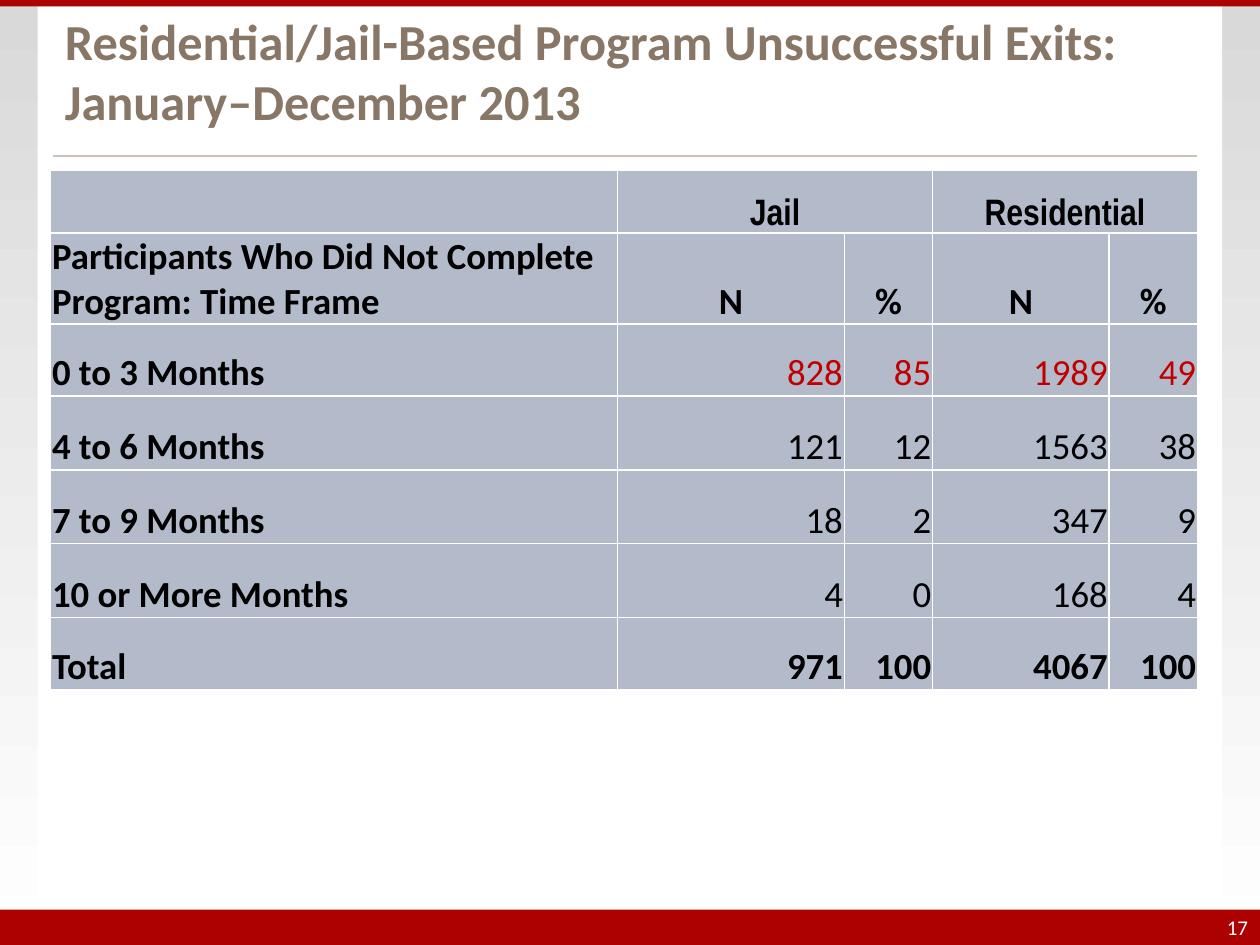
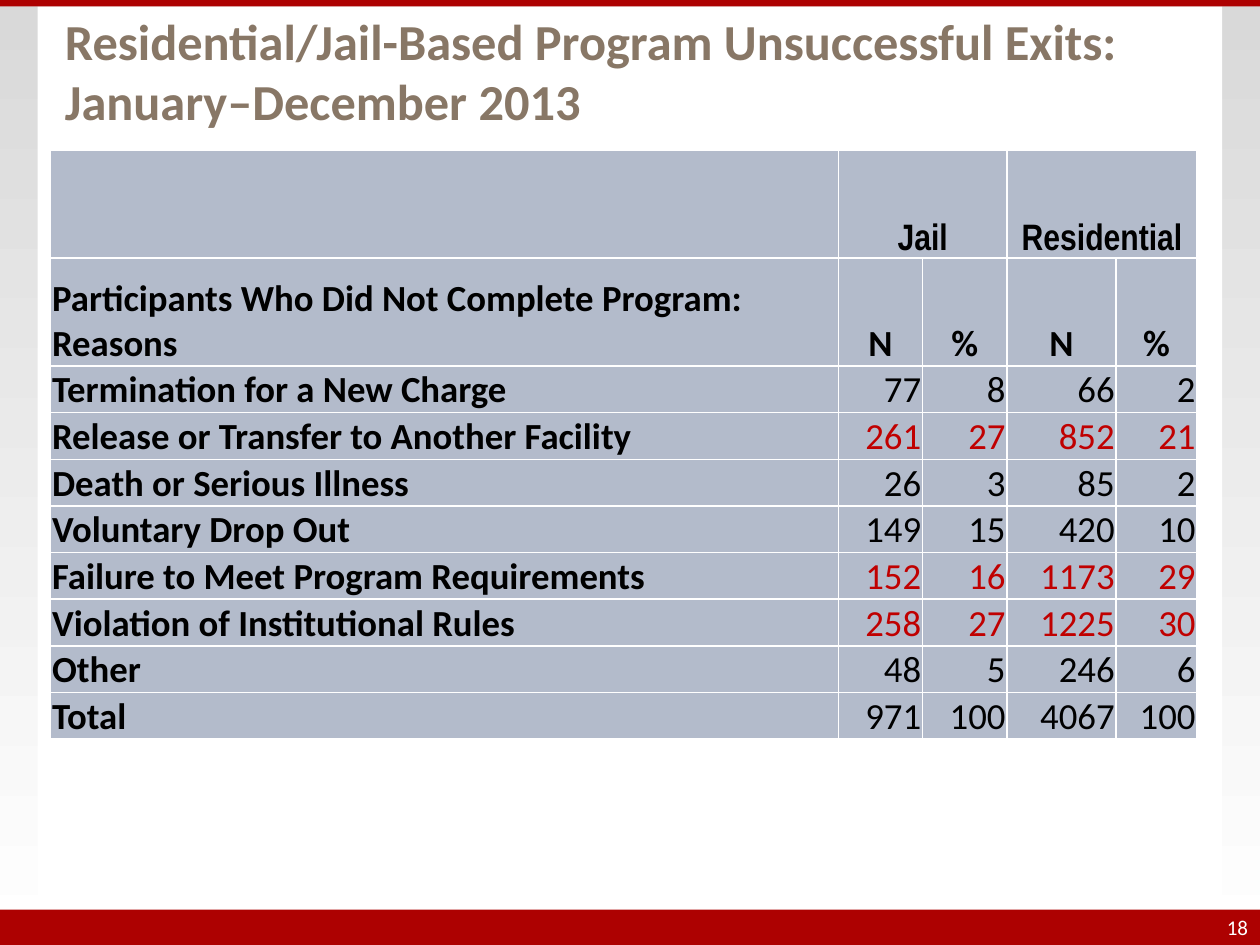
from collections import namedtuple
from dataclasses import dataclass

from lxml import etree
from pptx import Presentation
from pptx.dml.color import RGBColor
from pptx.enum import shapes, text
from pptx.oxml import ns
from pptx.util import Cm, Pt

Box = namedtuple("Box", "left top width height")
Style = namedtuple("Style", "font size color bold")


@dataclass(frozen=True)
class Theme:
    backdrop: tuple = ("D9D9D9", "FFFFFF")
    panel: str = "FFFFFF"
    band: str = "AD0101"
    rule: str = "CBC2B9"
    cell: str = "B3BBCB"
    border: str = "FFFFFF"
    rule_width: float = 1.25
    border_width: float = 1
    title: Style = Style("Calibri", 28.8, "887766", True)
    number: Style = Style("Calibri", 12, "FFFFFF", False)
    group: Style = Style("Arial Narrow", 21, "000000", True)
    label: Style = Style("Calibri", 21, "000000", True)
    value: Style = Style("Calibri", 21, "000000", False)
    highlight: Style = Style("Calibri", 21, "C00000", False)


THEME = Theme()
PAGE = Box(0, 0, 25.4, 19.05)
TITLE = "Residential/Jail-Based Program Unsuccessful Exits: January–December 2013"
GROUPS = ("Jail", "Residential")
LEFT, CENTER, RIGHT = text.PP_ALIGN.LEFT, text.PP_ALIGN.CENTER, text.PP_ALIGN.RIGHT

EXITS_BY_TIME = [
    ("0 to 3 Months", 828, 85, 1989, 49),
    ("4 to 6 Months", 121, 12, 1563, 38),
    ("7 to 9 Months", 18, 2, 347, 9),
    ("10 or More Months", 4, 0, 168, 4),
    ("Total", 971, 100, 4067, 100),
]
EXITS_BY_REASON = [
    ("Termination for a New Charge", 77, 8, 66, 2),
    ("Release or Transfer to Another Facility", 261, 27, 852, 21),
    ("Death or Serious Illness", 26, 3, 85, 2),
    ("Voluntary Drop Out", 149, 15, 420, 10),
    ("Failure to Meet Program Requirements", 152, 16, 1173, 29),
    ("Violation of Institutional Rules", 258, 27, 1225, 30),
    ("Other", 48, 5, 246, 6),
    ("Total", 971, 100, 4067, 100),
]


def rgb(color):
    return RGBColor.from_string(color)


def write(frame, words, style, align):
    frame.text = words
    para = frame.paragraphs[0]
    para.alignment = align
    font = para.runs[0].font
    font.name, font.size, font.bold = style.font, Pt(style.size), style.bold
    font.color.rgb = rgb(style.color)


def add_block(page, box, color):
    block = page.shapes.add_shape(shapes.MSO_SHAPE.RECTANGLE, *map(Cm, box))
    block.shadow.inherit = False
    block.fill.solid()
    block.fill.fore_color.rgb = rgb(color)
    block.line.fill.background()


def add_words(page, box, words, style, align, anchor):
    frame = page.shapes.add_textbox(*map(Cm, box)).text_frame
    frame.word_wrap = True
    frame.vertical_anchor = anchor
    frame.margin_left = frame.margin_right = Cm(0.24)
    frame.margin_top = frame.margin_bottom = Cm(0.11)
    write(frame, words, style, align)


def add_rule(page, left, right, top):
    rule = page.shapes.add_connector(
        shapes.MSO_CONNECTOR.STRAIGHT, Cm(left), Cm(top), Cm(right), Cm(top))
    rule.line.color.rgb = rgb(THEME.rule)
    rule.line.width = Pt(THEME.rule_width)
    etree.SubElement(rule.element.spPr, ns.qn("a:effectLst"))


def paint_backdrop(page):
    fill = page.background.fill
    fill.gradient()
    fill.gradient_angle = 270
    for position, (stop, color) in enumerate(zip(fill.gradient_stops, THEME.backdrop)):
        stop.color.rgb = rgb(color)
        stop.position = position


def add_frame(page, box, number):
    paint_backdrop(page)
    bottom = box.top + box.height
    footer = Box(box.left, bottom - 0.71, box.width, 0.71)
    add_block(page, Box(box.left + 0.76, box.top + 0.13, box.width - 1.52, box.height - 0.13),
              THEME.panel)
    add_block(page, footer, THEME.band)
    add_block(page, Box(box.left, box.top, box.width, 0.13), THEME.band)
    add_rule(page, box.left + 1.07, box.left + 24.13, box.top + 3.15)
    add_words(page, Box(box.left + 1.07, box.top + 0.64, 23.06, 2.11), TITLE,
              THEME.title, LEFT, text.MSO_ANCHOR.BOTTOM)
    add_words(page, Box(box.left + box.width - 1.57, footer.top, 1.57, footer.height),
              str(number), THEME.number, RIGHT, text.MSO_ANCHOR.MIDDLE)


def style_cell(cell):
    props = cell._tc.get_or_add_tcPr()
    for side in ("lnL", "lnR", "lnT", "lnB"):
        line = etree.SubElement(props, ns.qn(f"a:{side}"), w=str(Pt(THEME.border_width)))
        fill = etree.SubElement(line, ns.qn("a:solidFill"))
        etree.SubElement(fill, ns.qn("a:srgbClr"), val=THEME.border)
    cell.fill.solid()
    cell.fill.fore_color.rgb = rgb(THEME.cell)
    cell.vertical_anchor = text.MSO_ANCHOR.BOTTOM
    cell.margin_left = cell.margin_right = cell.margin_top = Cm(0.03)
    cell.margin_bottom = 0


def add_exit_table(page, left, top, widths, heights, heading, records,
                   highlighted, total_style):
    box = Box(left, top, sum(widths), sum(heights))
    table = page.shapes.add_table(len(heights), len(widths), *map(Cm, box)).table
    table.first_row = table.horz_banding = False
    for column, width in zip(table.columns, widths):
        column.width = Cm(width)
    for row, height in zip(table.rows, heights):
        row.height = Cm(height)
    for cell in table.iter_cells():
        style_cell(cell)

    for index, group in enumerate(GROUPS):
        first = 1 + 2 * index
        table.cell(0, first).merge(table.cell(0, first + 1))
        write(table.cell(0, first).text_frame, group, THEME.group, CENTER)

    for column, words in enumerate((heading, *("N", "%") * len(GROUPS))):
        write(table.cell(1, column).text_frame, words, THEME.label,
              CENTER if column else LEFT)

    for row, (label, *values) in enumerate(records, 2):
        style = THEME.highlight if label in highlighted else THEME.value
        if label == "Total":
            style = total_style
        write(table.cell(row, 0).text_frame, label, THEME.label, LEFT)
        for column, value in enumerate(values, 1):
            write(table.cell(row, column).text_frame, str(value), style, RIGHT)


def add_time_slide(page, box):
    add_frame(page, box, 17)
    add_exit_table(
        page, box.left + 1.02, box.top + 3.43,
        (11.43, 4.57, 1.78, 3.56, 1.78),
        (1.27, 1.83, 1.45, 1.49, 1.49, 1.49, 1.45),
        "Participants Who Did Not Complete Program: Time Frame",
        EXITS_BY_TIME, {"0 to 3 Months"}, THEME.label)


def add_reason_slide(page, box):
    add_frame(page, box, 18)
    add_exit_table(
        page, box.left + 1.02, box.top + 3.02,
        (15.88, 1.7, 1.7, 2.2, 1.63),
        (2.18, 2.18) + (0.94,) * len(EXITS_BY_REASON),
        "Participants Who Did Not Complete Program: Reasons",
        EXITS_BY_REASON,
        {"Release or Transfer to Another Facility",
         "Failure to Meet Program Requirements",
         "Violation of Institutional Rules"}, THEME.value)


def main():
    deck = Presentation()
    deck.slide_width, deck.slide_height = Cm(PAGE.width), Cm(PAGE.height)
    for build in (add_time_slide, add_reason_slide):
        build(deck.slides.add_slide(deck.slide_layouts[6]), PAGE)
    deck.save("out.pptx")


if __name__ == "__main__":
    main()
